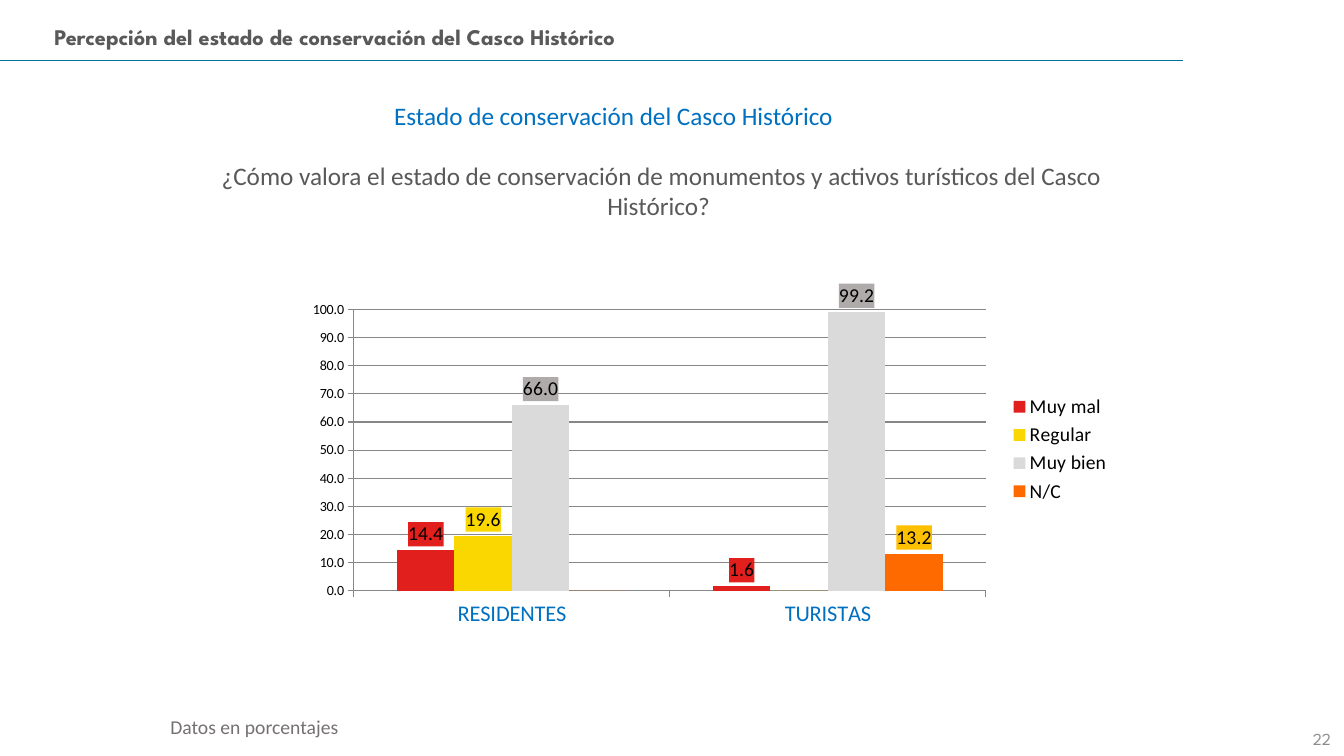
"""Builds a slide on how residents and tourists rate the old town's conservation."""
from lxml import etree
from pptx import Presentation
from pptx.chart.data import CategoryChartData
from pptx.dml.color import RGBColor
from pptx.enum.chart import XL_CHART_TYPE, XL_LABEL_POSITION, XL_LEGEND_POSITION, XL_TICK_MARK
from pptx.enum.shapes import MSO_CONNECTOR
from pptx.enum.text import MSO_ANCHOR, PP_ALIGN
from pptx.oxml import parse_xml
from pptx.oxml.ns import nsdecls, qn
from pptx.util import Inches, Pt

LEFT, CENTER, RIGHT = PP_ALIGN.LEFT, PP_ALIGN.CENTER, PP_ALIGN.RIGHT
TOP, BOTTOM = MSO_ANCHOR.TOP, MSO_ANCHOR.BOTTOM
COLUMNS = XL_CHART_TYPE.COLUMN_CLUSTERED
LEGEND_RIGHT = XL_LEGEND_POSITION.RIGHT
OUTSIDE_END = XL_LABEL_POSITION.OUTSIDE_END
TICK_OUT = XL_TICK_MARK.OUTSIDE
STRAIGHT = MSO_CONNECTOR.STRAIGHT

TEAL = RGBColor(0x00, 0x71, 0x9A)
BLUE = RGBColor(0x00, 0x70, 0xC0)
DARK_GRAY = RGBColor(0x59, 0x59, 0x59)
NOTE_GRAY = RGBColor(0x76, 0x71, 0x71)
NUMBER_GRAY = RGBColor(0x8C, 0x8C, 0x8C)
AXIS_GRAY = RGBColor(0x87, 0x87, 0x87)
BLACK = RGBColor(0x00, 0x00, 0x00)
RED = RGBColor(0xE1, 0x1F, 0x1D)
YELLOW = RGBColor(0xFA, 0xD7, 0x01)
LIGHT_GRAY = RGBColor(0xDA, 0xDA, 0xDA)
LABEL_GRAY = RGBColor(0xAF, 0xAB, 0xAB)
ORANGE = RGBColor(0xFF, 0x6A, 0x00)
AMBER = RGBColor(0xFF, 0xC0, 0x00)

HEADING_FONT, BODY_FONT = "League Spartan", "Calibri"

prs = Presentation()
prs.slide_width, prs.slide_height = Inches(13.33), Inches(7.5)
slide = prs.slides.add_slide(prs.slide_layouts[6])

header_rule = slide.shapes.add_connector(STRAIGHT, 0, Inches(0.6), Inches(11.73), Inches(0.6))
header_rule.line.color.rgb = TEAL
header_rule.line.width = Pt(1)
etree.SubElement(header_rule._element.spPr, qn("a:effectLst"))

texts = [
    ("Percepción del estado de conservación del Casco Histórico",
     (0.44, 0.18, 11.68, 0.37), HEADING_FONT, 16, DARK_GRAY, True, LEFT, TOP),
    ("22", (10.3, 7.08, 3, 0.4), HEADING_FONT, 12, NUMBER_GRAY, False, RIGHT, BOTTOM),
    ("Estado de conservación del Casco Histórico",
     (1.52, 0.95, 9.13, 0.4), BODY_FONT, 18, BLUE, False, CENTER, TOP),
    ("¿Cómo valora el estado de conservación de monumentos y activos turísticos "
     "del Casco Histórico? ",
     (1.82, 1.54, 9.48, 0.71), BODY_FONT, 18, DARK_GRAY, False, CENTER, TOP),
    ("Datos en porcentajes",
     (1.59, 7.04, 9.58, 0.34), BODY_FONT, 14, NOTE_GRAY, False, LEFT, TOP),
]
for text, place, font_name, size, color, bold, align, anchor in texts:
    frame = slide.shapes.add_textbox(*map(Inches, place)).text_frame
    frame.word_wrap = True
    frame.vertical_anchor = anchor
    paragraph = frame.paragraphs[0]
    paragraph.text = text
    paragraph.alignment = align
    paragraph.font.name = font_name
    paragraph.font.size = Pt(size)
    paragraph.font.bold = bold
    paragraph.font.color.rgb = color

ratings = [
    ("Muy mal", (14.4, 1.6), RED, RED),
    ("Regular", (19.6, 0), YELLOW, YELLOW),
    ("Muy bien", (66, 99.2), LIGHT_GRAY, LABEL_GRAY),
    ("N/C", (0, 13.2), ORANGE, AMBER),
]
rating_data = CategoryChartData(number_format="0.0")
rating_data.categories = ["RESIDENTES", "TURISTAS"]
for name, values, _, _ in ratings:
    rating_data.add_series(name, values)

chart = slide.shapes.add_chart(
    COLUMNS, Inches(2.58), Inches(2.57), Inches(8.54), Inches(3.77), rating_data).chart
chart.has_title = False
chart.font.name = BODY_FONT
chart.font.size = Pt(10)
chart.font.color.rgb = BLACK
chart.has_legend = True
chart.legend.position = LEGEND_RIGHT
chart.legend.include_in_layout = False
chart.legend.font.size = Pt(14)

value_axis, group_axis = chart.value_axis, chart.category_axis
value_axis.minimum_scale, value_axis.maximum_scale = 0, 100
value_axis.major_unit = 10
value_axis.tick_labels.number_format = "0.0"
value_axis.tick_labels.number_format_is_linked = False
value_axis.has_major_gridlines = True
group_axis.tick_labels.font.size = Pt(16)
group_axis.tick_labels.font.color.rgb = BLUE
for axis in (value_axis, group_axis):
    axis.major_tick_mark = TICK_OUT
for rule in (value_axis, group_axis, value_axis.major_gridlines):
    rule.format.line.color.rgb = AXIS_GRAY
    rule.format.line.width = Pt(0.75)

plot = chart.plots[0]
plot.gap_width, plot.overlap = 150, 0
plot.vary_by_categories = False
for series, (_, values, bar_color, label_color) in zip(plot.series, ratings):
    series.format.fill.solid()
    series.format.fill.fore_color.rgb = bar_color
    labels = series.data_labels
    labels.show_value = True
    labels.number_format = "0.0"
    labels.number_format_is_linked = False
    labels.position = OUTSIDE_END
    labels.font.size = Pt(14)
    labels_xml = labels._element
    labels_xml.find(qn("c:numFmt")).addnext(parse_xml(
        f'<c:spPr {nsdecls("c", "a")}><a:solidFill><a:srgbClr val="{label_color}"/>'
        '</a:solidFill></c:spPr>'))
    if 0 in values:
        labels_xml.insert(0, parse_xml(
            f'<c:dLbl {nsdecls("c")}><c:idx val="{values.index(0)}"/>'
            '<c:delete val="1"/></c:dLbl>'))

plot_area = chart._chartSpace.chart.plotArea
for old_layout in plot_area.findall(qn("c:layout")):
    plot_area.remove(old_layout)
layout = etree.Element(qn("c:layout"))
manual = etree.SubElement(layout, qn("c:manualLayout"))
for tag, value in [("layoutTarget", "inner"), ("xMode", "edge"), ("yMode", "edge"),
                   ("x", "0.109"), ("y", "0.133"), ("w", "0.734"), ("h", "0.74")]:
    etree.SubElement(manual, qn(f"c:{tag}")).set("val", value)
plot_area.insert(0, layout)

prs.save("out.pptx")
